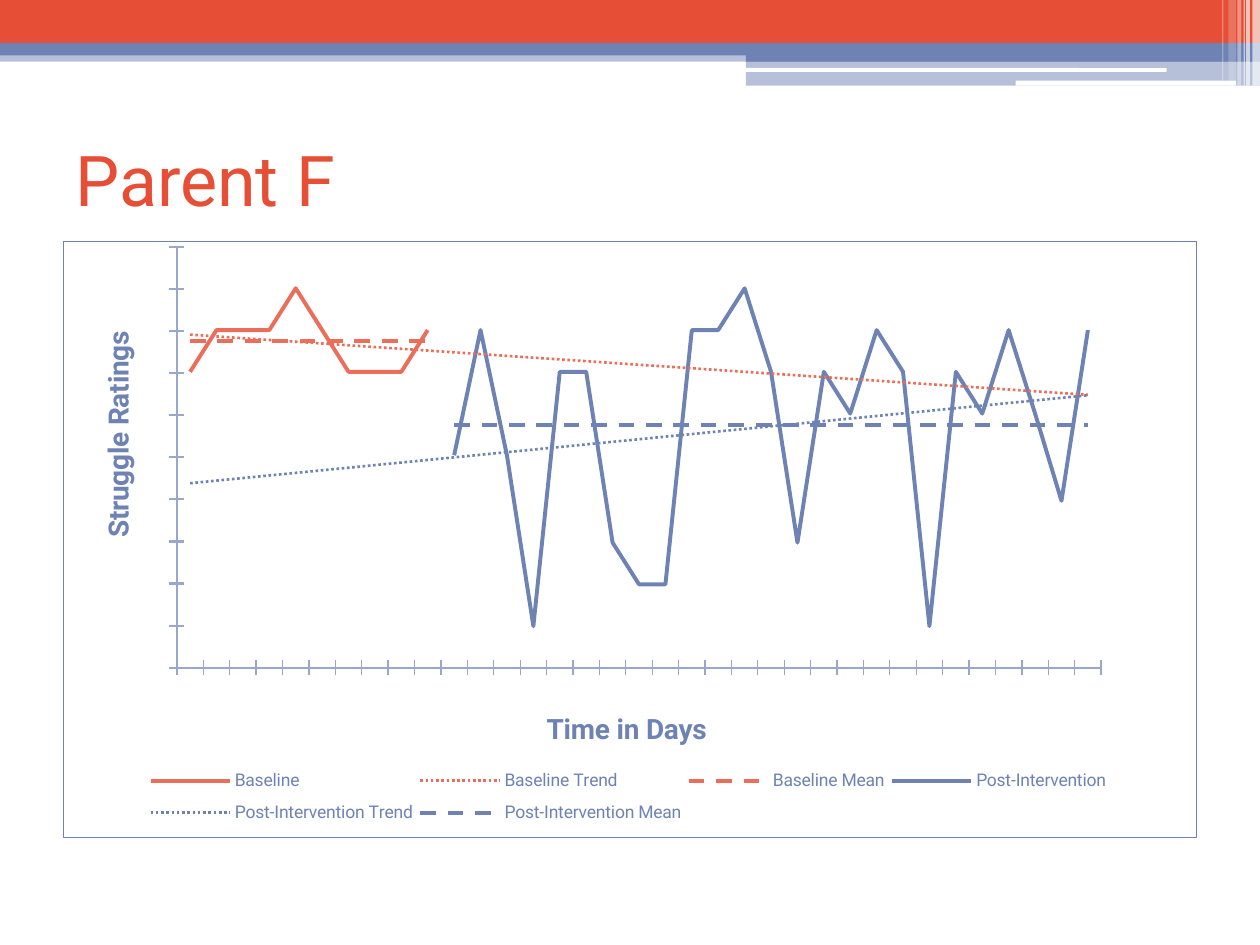
from lxml.etree import SubElement
from pptx import Presentation
from pptx.chart.data import CategoryChartData
from pptx.dml.color import RGBColor
from pptx.enum.chart import XL_CHART_TYPE as Kind, XL_LEGEND_POSITION as Spot
from pptx.enum.chart import XL_MARKER_STYLE as Mark, XL_TICK_LABEL_POSITION as Label
from pptx.enum.chart import XL_TICK_MARK as Tick
from pptx.enum.dml import MSO_LINE as Dash
from pptx.enum.shapes import MSO_SHAPE as Shape
from pptx.enum.text import MSO_ANCHOR as Anchor
from pptx.oxml import parse_xml
from pptx.oxml.ns import nsdecls, qn
from pptx.util import Inches, Pt

HUES = {"red": "E64F36", "coral": "EA6E59", "blue": "6E83B3",
        "axis": "9AA6CC", "white": "FFFFFF"}
FACE = "Roboto"
DAYS = 35
BASE = [78, 89, 89, 89, 100, 89, 78, 78, 78, 89]
POST = [56, 89, 56, 11, 78, 78, 33, 22, 22, 89, 89, 100, 78, 33, 78, 67,
        89, 78, 11, 78, 67, 89, 67, 44, 89]
LEAD = [None] * len(BASE)
TAIL = [None] * len(POST)
# name, values, colour, trend name (a series without one is a dashed mean)
LINES = [
    ("Baseline", BASE + TAIL, "coral", "Baseline Trend"),
    ("Baseline Mean", [86] * len(BASE) + TAIL, "coral", None),
    ("Post-Intervention", LEAD + POST, "blue", "Post-Intervention Trend"),
    ("Post-Intervention Mean", LEAD + [64] * len(POST), "blue", None),
]
# left, top, width, height, colour, opacity in percent
BANDS = [
    (0, 0.4, 10, 0.09, "blue", 50),
    (0, 0, 10, 0.34, "red", 100),
    (0, 0.34, 10, 0.1, "blue", 100),
    (5.92, 0.39, 4.08, 0.1, "blue", 100),
    (5.92, 0.48, 4.08, 0.2, "blue", 50),
]
SLOTS = [(5.91, 0.54, 3.35, 0.03), (8.06, 0.64, 1.75, 0.04)]
# left, width, height, opacity
STRIPES = [(9.94, 0.06, 0.68, 65), (9.89, 0.03, 0.68, 65),
           (9.87, 0.01, 0.68, 60), (9.82, 0.03, 0.68, 40),
           (9.75, 0.06, 0.64, 20), (9.7, 0.01, 0.64, 30)]


def hue(name):
    return RGBColor.from_string(HUES[name])


def style(font, size, color, bold=False):
    font.name, font.size, font.bold = FACE, Pt(size), bold
    font.color.rgb = hue(color)


def write(frame, text, size=10, color="blue", bold=False):
    run = frame.paragraphs[0].add_run()
    run.text = text
    style(run.font, size, color, bold)


def place(node, index, x, y, w=None, h=None, inner=False):
    """Give a chart part a manual layout, in fractions of the chart."""
    for old in node.findall(qn("c:layout")):
        node.remove(old)
    rows = [("layoutTarget", "inner")] if inner else []
    rows += [("xMode", "edge"), ("yMode", "edge"), ("x", x), ("y", y)]
    if w:
        rows += [("w", w), ("h", h)]
    body = "".join(f'<c:{tag} val="{val}"/>' for tag, val in rows)
    node.insert(index, parse_xml(
        f'<c:layout {nsdecls("c")}><c:manualLayout>{body}'
        '</c:manualLayout></c:layout>'))


def outline(color, width, dash="solid"):
    return (f'<c:spPr><a:ln w="{Pt(width)}"><a:solidFill>'
            f'<a:srgbClr val="{HUES[color]}"/></a:solidFill>'
            f'<a:prstDash val="{dash}"/></a:ln></c:spPr>')


def add_trend(line, name, color):
    line._element.find(qn("c:cat")).addprevious(parse_xml(
        f'<c:trendline {nsdecls("c", "a")}><c:name>{name}</c:name>'
        f'{outline(color, 1.5, "sysDot")}<c:trendlineType val="linear"/>'
        '<c:dispRSqr val="0"/><c:dispEq val="0"/></c:trendline>'))


def set_axis(axis, title, x, y, width):
    axis.has_major_gridlines = False
    axis.major_tick_mark = Tick.CROSS
    axis.minor_tick_mark = Tick.NONE
    axis.tick_label_position = Label.NONE
    axis.format.line.color.rgb = hue("axis")
    axis.format.line.width = Pt(width)
    write(axis.axis_title.text_frame, title, size=16, bold=True)
    place(axis.axis_title._element, 1, x, y)


class Deck:
    def __init__(self):
        self.show = Presentation()
        self.show.slide_width, self.show.slide_height = Inches(10), Inches(7.5)
        self.slide = self.show.slides.add_slide(self.show.slide_layouts[6])

    def bar(self, left, top, width, height, color, alpha=100, kind=Shape.RECTANGLE):
        box = self.slide.shapes.add_shape(
            kind, *map(Inches, (left, top, width, height)))
        box.shadow.inherit = False
        box.line.fill.background()
        box.fill.solid()
        box.fill.fore_color.rgb = hue(color)
        if alpha < 100:
            tint = box._element.spPr.find(".//" + qn("a:srgbClr"))
            SubElement(tint, qn("a:alpha"), val=str(alpha * 1000))

    def title(self, text, left, top, width, height):
        box = self.slide.shapes.add_textbox(
            *map(Inches, (left, top, width, height)))
        box.text_frame.word_wrap = True
        box.text_frame.vertical_anchor = Anchor.MIDDLE
        write(box.text_frame, text, size=40, color="red")

    def chart(self, left, top, width, height):
        data = CategoryChartData()
        data.categories = [str(day) for day in range(1, DAYS + 1)]
        for name, values, *_ in LINES:
            data.add_series(name, values)
        chart = self.slide.shapes.add_chart(
            Kind.LINE, *map(Inches, (left, top, width, height)), data).chart
        chart.has_title = False
        style(chart.font, 10, "blue")
        chart.has_legend = True
        chart.legend.position = Spot.BOTTOM
        chart.legend.include_in_layout = False
        style(chart.legend.font, 10, "blue")
        place(chart.legend._element, 1, 0.07, 0.868, 0.857, 0.128)
        chart.plots[0].vary_by_categories = False
        for line, (_, _, color, trend) in zip(chart.plots[0].series, LINES):
            line.smooth = False
            line.marker.style = Mark.NONE
            line.format.line.color.rgb = hue(color)
            line.format.line.width = Pt(2.25)
            if trend:
                add_trend(line, trend, color)
            else:
                line.format.line.dash_style = Dash.DASH
        rate = chart.value_axis
        rate.minimum_scale, rate.maximum_scale, rate.major_unit = 0, 111, 11.1
        set_axis(chart.category_axis, "Time in Days", 0.422, 0.78, 0.75)
        set_axis(rate, "Struggle Ratings", 0.028, 0.143, 1.25)
        turn = rate.axis_title.text_frame._txBody.bodyPr
        turn.set("rot", "-5400000")
        turn.set("vert", "horz")
        space = chart._chartSpace
        place(space.chart.plotArea, 0, 0.1, 0.009, 0.816, 0.707, inner=True)
        edge = outline("blue", 0.75).replace(
            "<c:spPr>", f'<c:spPr {nsdecls("c", "a")}><a:noFill/>')
        space.chart.addnext(parse_xml(edge))


def main():
    deck = Deck()
    for band in BANDS:
        deck.bar(*band)
    for slot in SLOTS:
        deck.bar(*slot, "white", kind=Shape.ROUNDED_RECTANGLE)
    for left, width, height, alpha in STRIPES:
        deck.bar(left, 0, width, height, "white", alpha)
    deck.title("Parent F", 0.5, 0.83, 9, 1.17)
    deck.chart(0.5, 1.91, 9, 4.74)
    deck.show.save("out.pptx")


if __name__ == "__main__":
    main()
